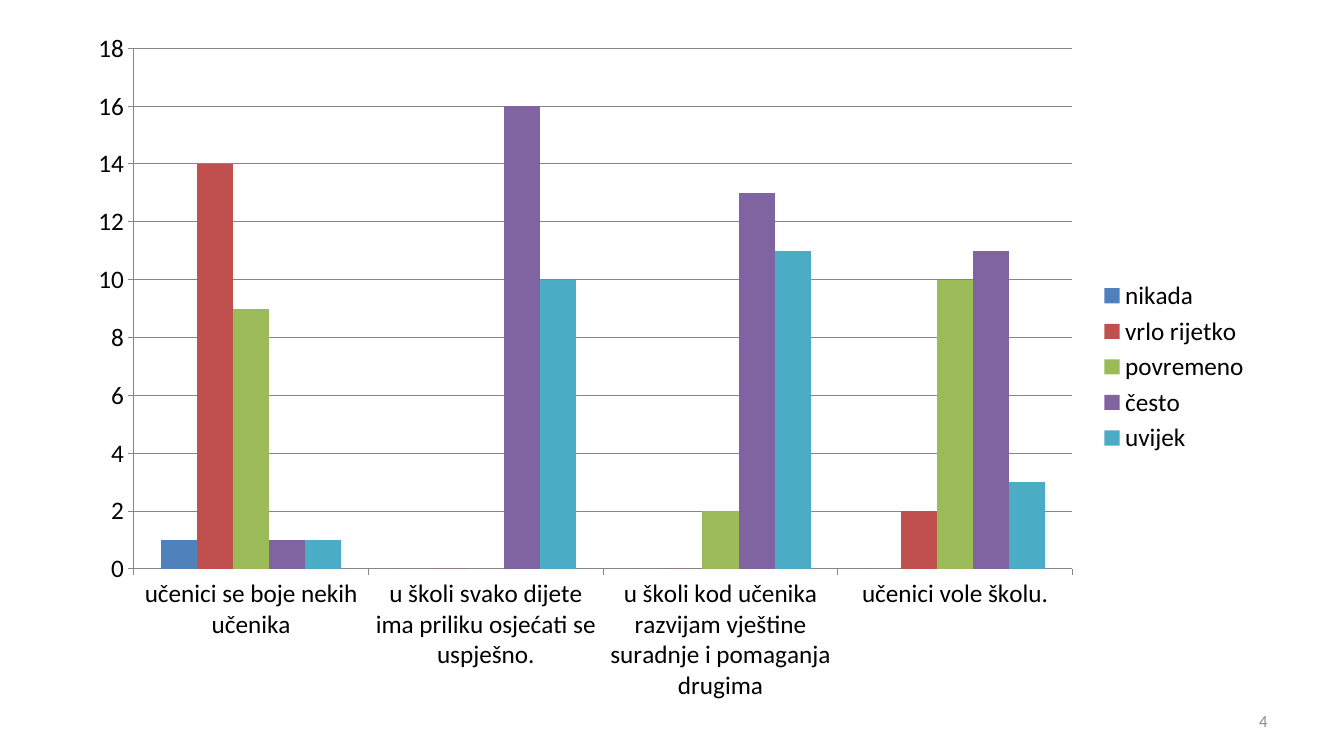
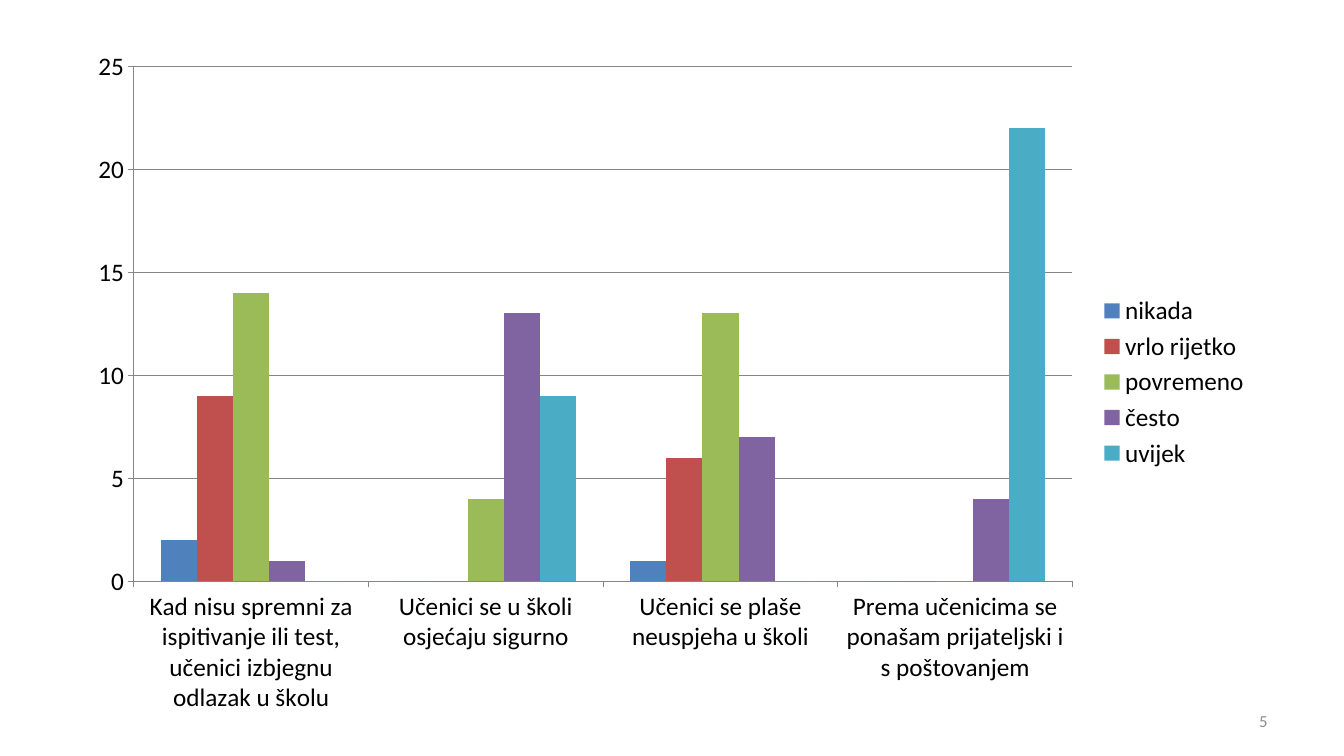
from pptx import Presentation
from pptx.chart.data import CategoryChartData
from pptx.dml.color import RGBColor
from pptx.enum.chart import XL_CHART_TYPE, XL_LEGEND_POSITION, XL_TICK_MARK
from pptx.enum.text import MSO_ANCHOR, PP_ALIGN
from pptx.util import Inches, Pt

# Shared style
FONT = "Calibri"
BLACK = RGBColor(0x00, 0x00, 0x00)
GRAY = RGBColor(0x8C, 0x8C, 0x8C)
RULE = RGBColor(0x86, 0x86, 0x86)
SCALE = {
    "nikada": RGBColor(0x4F, 0x81, 0xBD),
    "vrlo rijetko": RGBColor(0xC0, 0x50, 0x4D),
    "povremeno": RGBColor(0x9B, 0xBB, 0x59),
    "često": RGBColor(0x80, 0x64, 0xA2),
    "uvijek": RGBColor(0x4B, 0xAC, 0xC6),
}
FOOTER = (9.56, 6.95, 3.11, 0.4)

# Each slide: number, chart box, axis top and step, answers per question
# in the order of SCALE
SLIDES = [
    (4, (0.74, 0.19, 11.76, 6.9), 18, 2, {
        "učenici se boje nekih učenika": (1, 14, 9, 1, 1),
        "u školi svako dijete ima priliku osjećati se uspješno.":
            (0, 0, 0, 16, 10),
        "u školi kod učenika razvijam vještine suradnje i pomaganja drugima":
            (0, 0, 2, 13, 11),
        "učenici vole školu.": (0, 2, 10, 11, 3),
    }),
    (5, (0.74, 0.37, 11.76, 6.84), 25, 5, {
        "Kad nisu spremni za ispitivanje ili test, učenici izbjegnu "
        "odlazak u školu": (2, 9, 14, 1, 0),
        "Učenici se u školi osjećaju sigurno": (0, 0, 4, 13, 9),
        "Učenici se plaše neuspjeha u školi": (1, 6, 13, 7, 0),
        "Prema učenicima se ponašam prijateljski i s poštovanjem":
            (0, 0, 0, 4, 22),
    }),
]


def style(font, size, color):
    font.name, font.size, font.color.rgb = FONT, Pt(size), color


def rule(line):
    line.color.rgb, line.width = RULE, Pt(0.75)


def add_bars(slide, box, top, step, answers):
    data = CategoryChartData(number_format="General")
    data.categories = list(answers)
    for name, vals in zip(SCALE, zip(*answers.values())):
        data.add_series(name, vals)
    chart = slide.shapes.add_chart(
        XL_CHART_TYPE.COLUMN_CLUSTERED, *map(Inches, box), data).chart
    chart.has_title = False
    style(chart.font, 18, BLACK)

    # Columns
    plot = chart.plots[0]
    plot.gap_width, plot.overlap = 150, 0
    plot.vary_by_categories = False
    for bars in plot.series:
        bars.format.fill.solid()
        bars.format.fill.fore_color.rgb = SCALE[bars.name]

    # Axes and grid
    for axis in (chart.category_axis, chart.value_axis):
        axis.major_tick_mark = XL_TICK_MARK.OUTSIDE
        axis.minor_tick_mark = XL_TICK_MARK.NONE
        rule(axis.format.line)
    axis = chart.value_axis
    axis.minimum_scale, axis.maximum_scale = 0, top
    axis.major_unit = step
    axis.has_major_gridlines = True
    rule(axis.major_gridlines.format.line)

    # Legend
    chart.has_legend = True
    chart.legend.position = XL_LEGEND_POSITION.RIGHT
    chart.legend.include_in_layout = False


def add_footer(slide, number):
    frame = slide.shapes.add_textbox(*map(Inches, FOOTER)).text_frame
    frame.word_wrap = True
    frame.vertical_anchor = MSO_ANCHOR.MIDDLE
    para = frame.paragraphs[0]
    para.text = str(number)
    para.alignment = PP_ALIGN.RIGHT
    style(para.font, 12, GRAY)


def main():
    deck = Presentation()
    deck.slide_width, deck.slide_height = Inches(13.33), Inches(7.5)
    blank = deck.slide_layouts[6]
    for number, box, top, step, answers in SLIDES:
        slide = deck.slides.add_slide(blank)
        add_bars(slide, box, top, step, answers)
        add_footer(slide, number)
    deck.save("out.pptx")


if __name__ == "__main__":
    main()
